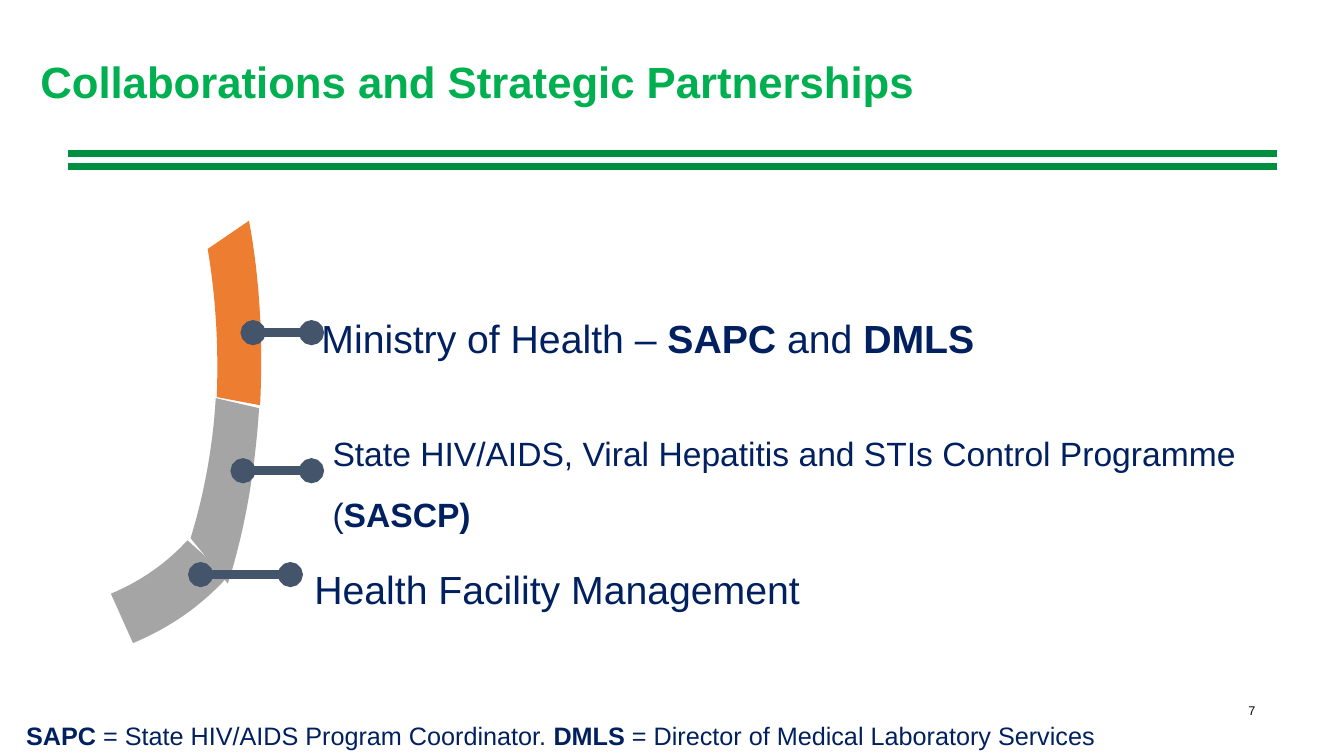
import pptx
import pptx.util
import pptx.dml.color
import pptx.enum.shapes
import pptx.enum.text
import pptx.oxml.ns
import lxml.etree

RGBColor = pptx.dml.color.RGBColor
Inches = pptx.util.Inches
TITLE_GREEN = RGBColor(0x00, 0xB0, 0x50)
RULE_GREEN = RGBColor(0x00, 0x8E, 0x40)
NAVY = RGBColor(0x00, 0x20, 0x60)
ORANGE = RGBColor(0xED, 0x7D, 0x31)
GREY = RGBColor(0xA5, 0xA5, 0xA5)
SLATE = RGBColor(0x44, 0x54, 0x6A)
BLACK = RGBColor(0, 0, 0)

WIDTH, HEIGHT = 13.33, 7.5
CURVE_STEPS = 16
TITLE = "Collaborations and Strategic Partnerships"
PAGE_NUMBER = "7"

PARTNERS = [
    {"spans": [("Ministry of Health – ", False), ("SAPC", True),
               (" and ", False), ("DMLS", True)],
     "box": (3.09, 2.84, 9.11, 0.72), "size": 28, "pin": (2.51, 3.09, 3.3)},
    {"spans": [("State HIV/AIDS, Viral Hepatitis and STIs Control Programme (", False),
               ("SASCP)", True)],
     "box": (3.2, 4.05, 9.83, 1.24), "size": 24, "pin": (2.41, 3.09, 4.67)},
    {"spans": [("Health Facility Management", False)],
     "box": (3.02, 5.33, 8.36, 0.72), "size": 28, "pin": (1.99, 2.88, 5.7)},
]
ABBREVIATIONS = [("SAPC ", True), ("= State HIV/AIDS Program Coordinator. ", False),
                 ("DMLS ", True), ("= Director of Medical Laboratory Services", False)]

ARC_SEGMENTS = [
    (ORANGE, [(2.47, 2.19), (2.58, 2.78), (2.61, 3.41), (2.58, 4.02)],
     [(2.15, 3.94), (2.17, 3.44), (2.14, 2.94), (2.06, 2.47)]),
    (GREY, [(2.57, 4.05), (2.53, 4.67), (2.43, 5.26), (2.26, 5.79)],
     [(1.89, 5.34), (2.02, 4.92), (2.11, 4.45), (2.14, 3.95)]),
    (GREY, [(2.26, 5.72), (2.0, 6.01), (1.68, 6.23), (1.32, 6.38)],
     [(1.1, 5.89), (1.39, 5.77), (1.65, 5.59), (1.86, 5.36)]),
]


def curve_points(controls):
    points = []
    for step in range(CURVE_STEPS + 1):
        t = step / CURVE_STEPS
        weights = ((1 - t) ** 3, 3 * t * (1 - t) ** 2, 3 * t * t * (1 - t), t ** 3)
        points.append(tuple(Inches(sum(w * c[axis] for w, c in zip(weights, controls)))
                            for axis in (0, 1)))
    return points


def add_segment(page, color, outer, inner):
    points = curve_points(outer) + curve_points(inner)
    builder = page.shapes.build_freeform(*points[0], scale=1.0)
    builder.add_line_segments(points[1:], close=True)
    segment = builder.convert_to_shape()
    segment.shadow.inherit = False
    segment.fill.solid()
    segment.fill.fore_color.rgb = color
    segment.line.fill.background()


def add_line(page, left, right, height, color, weight, oval_ends=False):
    line = page.shapes.add_connector(
        pptx.enum.shapes.MSO_CONNECTOR.STRAIGHT,
        Inches(left), Inches(height), Inches(right), Inches(height))
    line.line.color.rgb = color
    line.line.width = pptx.util.Pt(weight)
    qn = pptx.oxml.ns.qn
    if oval_ends:
        outline = line.line._get_or_add_ln()
        for end in ("a:headEnd", "a:tailEnd"):
            lxml.etree.SubElement(outline, qn(end), type="oval")
    lxml.etree.SubElement(line._element.spPr, qn("a:effectLst"))


def place(shape, box):
    shape.left, shape.top, shape.width, shape.height = map(Inches, box)


def style(para, size, color):
    para.font.name = "Arial"
    para.font.size = pptx.util.Pt(size)
    para.font.color.rgb = color


def add_text(page, box, spans, size, color=NAVY, spacing=None):
    shape = page.shapes.add_textbox(*map(Inches, box))
    shape.text_frame.word_wrap = True
    para = shape.text_frame.paragraphs[0]
    if spacing:
        para.line_spacing = spacing
    style(para, size, color)
    for text, bold in spans:
        span = para.add_run()
        span.text = text
        span.font.bold = bold
    return para


def main():
    deck = pptx.Presentation()
    deck.slide_width, deck.slide_height = Inches(WIDTH), Inches(HEIGHT)
    page = deck.slides.add_slide(deck.slide_layouts.get_by_name("Title Only"))

    number = add_text(page, (9.44, 6.92, 3.11, 0.52), [(PAGE_NUMBER, False)], 9, BLACK)
    number.alignment = pptx.enum.text.PP_ALIGN.RIGHT
    for height in (1.65, 1.52):
        add_line(page, 0.67, 12.67, height, RULE_GREEN, 5)

    title = page.shapes.title
    place(title, (0.3, 0.45, 12.05, 0.71))
    title.text_frame.text = TITLE
    title.text_frame.vertical_anchor = pptx.enum.text.MSO_ANCHOR.MIDDLE
    para = title.text_frame.paragraphs[0]
    para.alignment = pptx.enum.text.PP_ALIGN.LEFT
    style(para, 31.2, TITLE_GREEN)
    para.font.bold = True

    for color, outer, inner in ARC_SEGMENTS:
        add_segment(page, color, outer, inner)
    for partner in PARTNERS:
        add_line(page, *partner["pin"], SLATE, 6, oval_ends=True)
        add_text(page, partner["box"], partner["spans"], partner["size"], spacing=1.5)
    add_text(page, (0.16, 7.1, 13.02, 0.4), ABBREVIATIONS, 18)

    deck.save("out.pptx")


if __name__ == "__main__":
    main()
